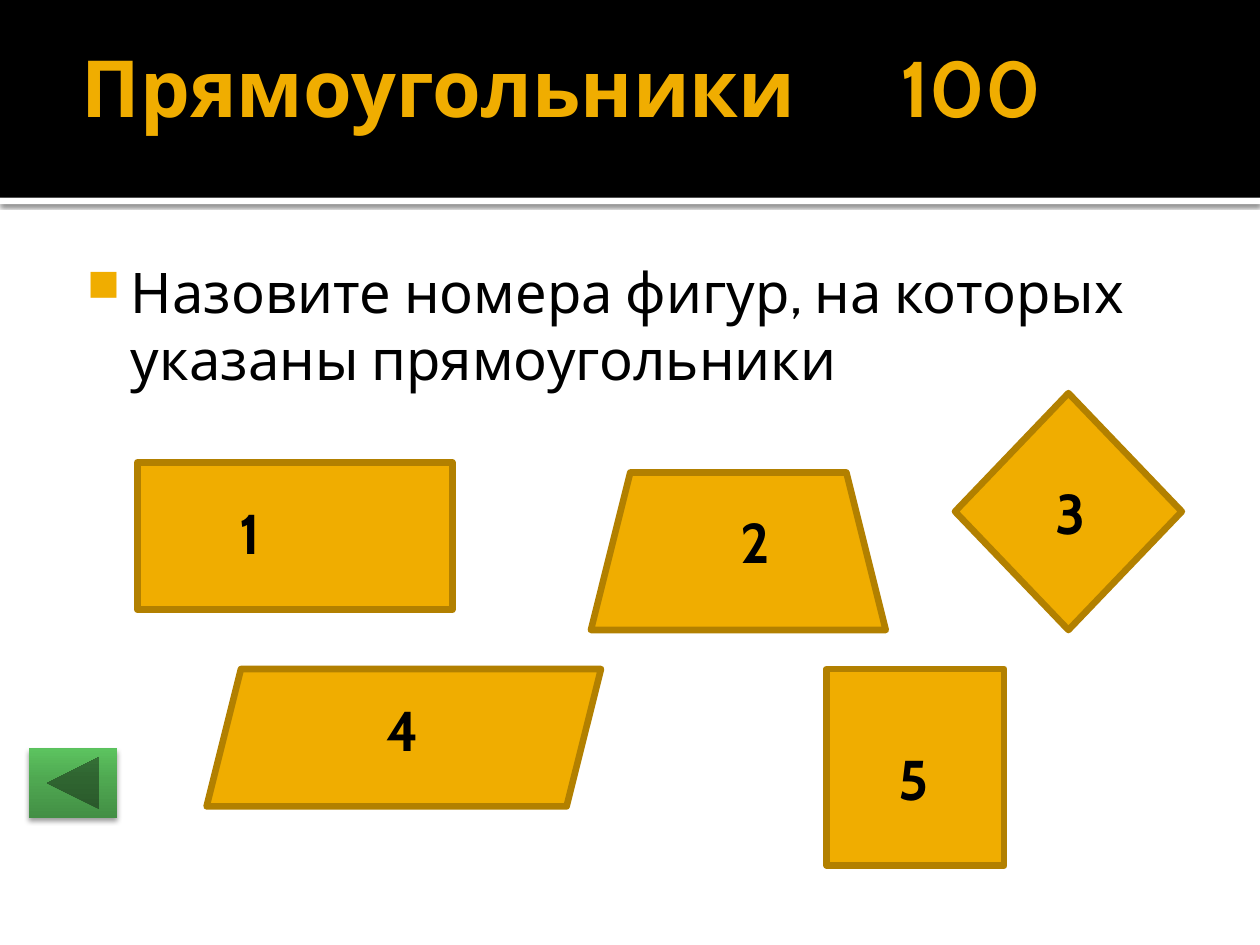
import dataclasses

import lxml.etree
import pptx
import pptx.dml.color
import pptx.enum.shapes
import pptx.enum.text
import pptx.oxml
import pptx.oxml.ns
import pptx.util

Inches = pptx.util.Inches
Pt = pptx.util.Pt
Kind = pptx.enum.shapes.MSO_SHAPE
Anchor = pptx.enum.text.MSO_ANCHOR
Box = tuple[float, float, float, float]

FONT = "Cabin"
COLORS = {
    "amber": "F0AD00",
    "outline": "B28000",
    "black": "000000",
    "white": "FFFFFF",
}
BUTTON_STOPS = ((0, "438F45"), (55, "4FA851"), (100, "5CC35F"))


@dataclasses.dataclass(frozen=True)
class Figure:
    kind: Kind
    box: Box


@dataclasses.dataclass(frozen=True)
class Label:
    text: str
    box: Box


FIGURES = (
    Figure(Kind.RECTANGLE, (1.09, 3.67, 2.5, 1.17)),
    Figure(Kind.TRAPEZOID, (4.69, 3.75, 2.34, 1.25)),
    Figure(Kind.PARALLELOGRAM, (1.64, 5.31, 3.13, 1.09)),
    Figure(Kind.RECTANGLE, (6.56, 5.31, 1.41, 1.56)),
    Figure(Kind.DIAMOND, (7.58, 3.12, 1.8, 1.88)),
)
LABELS = (
    Label("1", (1.8, 3.91, 0.42, 0.64)),
    Label("2", (5.78, 3.98, 0.42, 0.64)),
    Label("3", (8.28, 3.75, 0.42, 0.64)),
    Label("4", (2.97, 5.47, 0.44, 0.64)),
    Label("5", (7.03, 5.86, 0.42, 0.64)),
)


def rgb(name: str):
    return pptx.dml.color.RGBColor.from_string(COLORS[name])


def drawing_xml(body: str):
    return pptx.oxml.parse_xml(body.replace(">", f" {pptx.oxml.ns.nsdecls('a')}>", 1))


def write_text(frame, text: str, *, size=32, color="black", bold=False, wrap=True,
               anchor=Anchor.TOP, insets: Box = (0.1, 0.05, 0.1, 0.05)):
    frame.word_wrap = wrap
    frame.auto_size = pptx.enum.text.MSO_AUTO_SIZE.NONE if wrap else (
        pptx.enum.text.MSO_AUTO_SIZE.SHAPE_TO_FIT_TEXT)
    frame.vertical_anchor = anchor
    frame.margin_left, frame.margin_top, frame.margin_right, frame.margin_bottom = map(
        Inches, insets)
    paragraph = frame.paragraphs[0]
    paragraph.alignment = pptx.enum.text.PP_ALIGN.LEFT
    run = paragraph.add_run()
    run.text = text
    run.font.name = FONT
    run.font.size = Pt(size)
    run.font.bold = bold
    run.font.color.rgb = rgb(color)
    return paragraph


def add_bullet(paragraph, left: float, hanging: float) -> None:
    properties = paragraph._p.get_or_add_pPr()
    properties.set("marL", str(Inches(left)))
    properties.set("indent", str(-Inches(hanging)))
    for body in (
        f'<a:buClr><a:srgbClr val="{COLORS["amber"]}"/></a:buClr>',
        '<a:buSzPct val="80000"></a:buSzPct>',
        '<a:buChar char="■"></a:buChar>',
    ):
        properties.append(drawing_xml(body))


def add_figure(slide, kind: Kind, box: Box, fill: str, outline: str | None = None):
    shape = slide.shapes.add_shape(kind, *map(Inches, box))
    shape.shadow.inherit = False
    shape.fill.solid()
    shape.fill.fore_color.rgb = rgb(fill)
    if outline:
        shape.line.color.rgb = rgb(outline)
        shape.line.width = Pt(3.78)
    else:
        shape.line.fill.background()
    return shape


def add_shadow(shape, opacity: int, blur: float, distance: float) -> None:
    effects = shape._element.spPr.find(pptx.oxml.ns.qn("a:effectLst"))
    effects.append(drawing_xml(
        f'<a:outerShdw blurRad="{Pt(blur)}" dist="{Pt(distance)}" dir="5400000" rotWithShape="0">'
        f'<a:srgbClr val="{COLORS["black"]}"><a:alpha val="{opacity * 1000}"/></a:srgbClr>'
        "</a:outerShdw>"))


def add_gradient(shape, stops: tuple, angle: int) -> None:
    properties = shape._element.spPr
    solid = properties.find(pptx.oxml.ns.qn("a:solidFill"))
    stop_list = "".join(
        f'<a:gs pos="{position * 1000}"><a:srgbClr val="{color}"/></a:gs>'
        for position, color in stops)
    properties.replace(solid, drawing_xml(
        f'<a:gradFill rotWithShape="1"><a:gsLst>{stop_list}</a:gsLst>'
        f'<a:lin ang="{angle * 60000}" scaled="0"/></a:gradFill>'))


def add_label(slide, text: str, box: Box, **text_format):
    label = slide.shapes.add_textbox(*map(Inches, box))
    return write_text(label.text_frame, text, **text_format)


def main() -> None:
    presentation = pptx.Presentation()
    presentation.slide_width, presentation.slide_height = Inches(10), Inches(7.5)
    slide = presentation.slides.add_slide(presentation.slide_layouts[5])

    divider = add_figure(slide, Kind.RECTANGLE, (0, 1.57, 10, 0.05), "white")
    add_shadow(divider, 60, 2.5, 0.8)
    add_figure(slide, Kind.RECTANGLE, (0, 0, 10, 1.57), "black")

    title = slide.shapes.title
    title.left, title.top, title.width, title.height = map(Inches, (0.55, 0, 9, 1.37))
    write_text(title.text_frame, "Прямоугольники \t\t100", size=45, color="amber", bold=True,
               anchor=Anchor.MIDDLE, insets=(0.1, 0.05, 0.05, 0.05))
    divider.element.getparent().append(title.element)

    question = add_label(slide, "Назовите номера фигур, на которых указаны прямоугольники",
                         (0.5, 1.94, 9, 5.06), insets=(0.06, 0.1, 0.1, 0.05))
    add_bullet(question, 0.48, 0.35)

    for figure in FIGURES:
        add_figure(slide, figure.kind, figure.box, "amber", "outline")
    for label in LABELS:
        add_label(slide, label.text, label.box, bold=True, wrap=False)

    back_button = add_figure(
        slide, Kind.ACTION_BUTTON_BACK_OR_PREVIOUS, (0.23, 5.94, 0.7, 0.55), "amber")
    add_gradient(back_button, BUTTON_STOPS, 270)
    add_shadow(back_button, 38, 3.1, 2)

    presentation.save("out.pptx")


if __name__ == "__main__":
    main()
